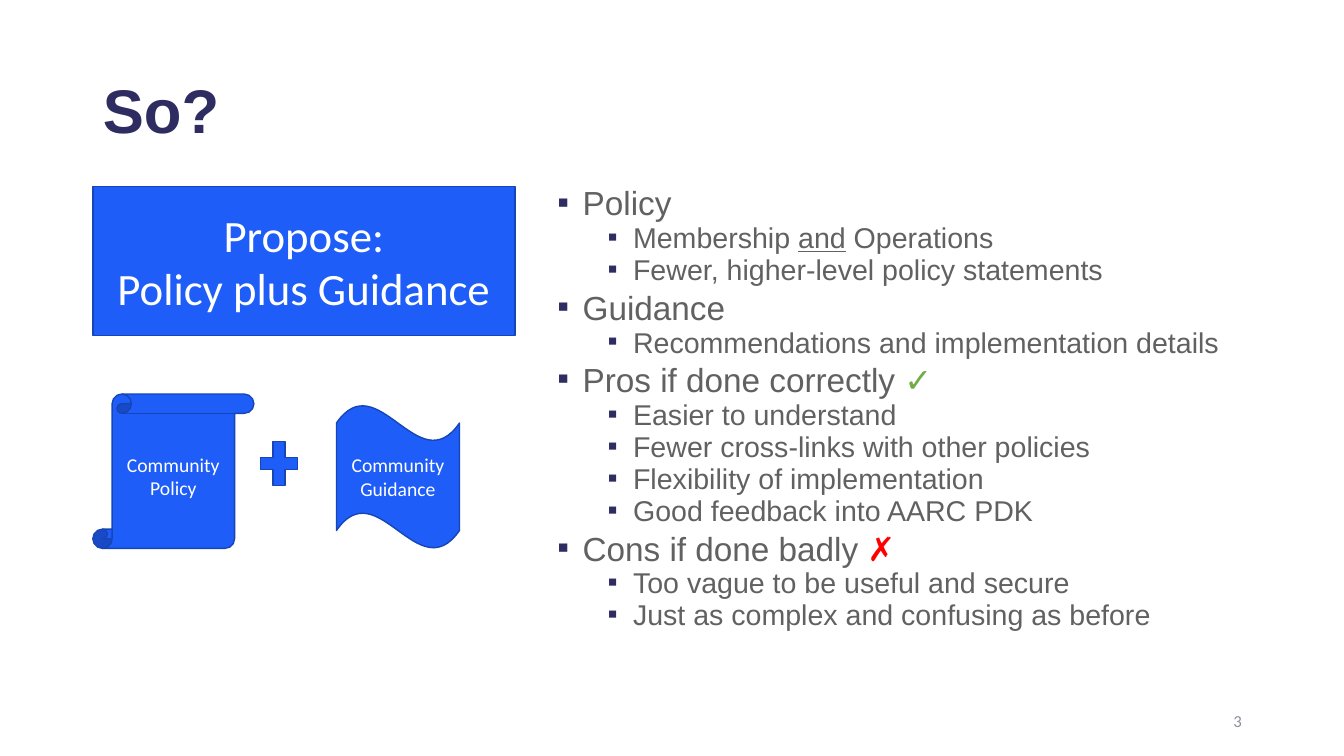
from lxml import etree
from pptx import Presentation
from pptx.dml.color import RGBColor
from pptx.enum.shapes import MSO_SHAPE
from pptx.enum.text import MSO_ANCHOR, MSO_AUTO_SIZE, PP_ALIGN
from pptx.oxml.ns import qn
from pptx.util import Cm, Pt

RECTANGLE, SCROLL = MSO_SHAPE.RECTANGLE, MSO_SHAPE.VERTICAL_SCROLL
WAVE, PLUS = MSO_SHAPE.WAVE, MSO_SHAPE.MATH_PLUS
TOP, MIDDLE = MSO_ANCHOR.TOP, MSO_ANCHOR.MIDDLE
LEFT, CENTER, RIGHT = PP_ALIGN.LEFT, PP_ALIGN.CENTER, PP_ALIGN.RIGHT
NO_FIT = MSO_AUTO_SIZE.NONE

NAVY, GREY, PALE_GREY = "2E2C61", "616161", "8F8F9E"
BLUE, DARK_BLUE, WHITE = "1E5DF8", "1645B7", "FFFFFF"
GREEN, RED = "70AD47", "FF0000"

LEVELS = [
    {"size": 23.8, "before": 8, "margin": Cm(0.64)},
    {"size": 20.4, "before": 5, "margin": Cm(1.91)},
]
HANGING = Cm(0.64)

POINTS = [
    (0, [("Policy", {})]),
    (1, [("Membership ", {}), ("and", {"underline": True}), (" Operations", {})]),
    (1, [("Fewer, higher-level policy statements", {})]),
    (0, [("Guidance", {})]),
    (1, [("Recommendations and implementation details", {})]),
    (0, [("Pros if done correctly ", {}), ("✓", {"color": GREEN})]),
    (1, [("Easier to understand", {})]),
    (1, [("Fewer cross-links with other policies", {})]),
    (1, [("Flexibility of implementation", {})]),
    (1, [("Good feedback into AARC PDK", {})]),
    (0, [("Cons if done badly ", {}), ("✗", {"color": RED})]),
    (1, [("Too vague to be useful and secure", {})]),
    (1, [("Just as complex and confusing as before", {})]),
]


def rgb(color):
    return RGBColor.from_string(color)


def add_span(para, text, size, color, font="Calibri", bold=None, underline=None):
    span = para.add_run()
    span.text = text
    span.font.name = font
    span.font.size = Pt(size)
    span.font.color.rgb = rgb(color)
    span.font.bold = bold
    span.font.underline = underline


def place(box, left, top, width, height):
    box.left, box.top = Cm(left), Cm(top)
    box.width, box.height = Cm(width), Cm(height)


def set_frame(box, anchor):
    frame = box.text_frame
    frame.word_wrap = True
    frame.auto_size = NO_FIT
    frame.vertical_anchor = anchor
    return frame


def add_bullet(para, level):
    properties = para._p.get_or_add_pPr()
    properties.set("marL", str(LEVELS[level]["margin"]))
    properties.set("indent", str(-HANGING))
    color = etree.SubElement(properties, qn("a:buClr"))
    etree.SubElement(color, qn("a:srgbClr"), val=NAVY)
    etree.SubElement(properties, qn("a:buFont"), typeface="Arial")
    etree.SubElement(properties, qn("a:buChar"), char="▪")


def fill_title(title, text):
    place(title, 2.34, 1.02, 29.21, 3.68)
    para = set_frame(title, MIDDLE).paragraphs[0]
    para.alignment = LEFT
    para.line_spacing = 0.9
    add_span(para, text, 44, NAVY, "Arial", bold=True)


def fill_body(body, points):
    place(body, 13.79, 4.72, 17.78, 12.12)
    frame = set_frame(body, TOP)
    for index, (level, spans) in enumerate(points):
        para = frame.add_paragraph() if index else frame.paragraphs[0]
        para.level = level
        add_bullet(para, level)
        para.line_spacing = 0.73
        para.space_before = Pt(LEVELS[level]["before"] if index else 0)
        for text, style in spans:
            look = {"color": GREY, "font": "Arial", **style}
            add_span(para, text, LEVELS[level]["size"], **look)


def add_blue_shape(page, kind, left, top, width, height, lines=(), size=14):
    shape = page.shapes.add_shape(kind, Cm(left), Cm(top), Cm(width), Cm(height))
    shape.shadow.inherit = False
    shape.fill.solid()
    shape.fill.fore_color.rgb = rgb(BLUE)
    shape.line.color.rgb = rgb(DARK_BLUE)
    shape.line.width = Pt(1)
    frame = set_frame(shape, MIDDLE)
    for index, line in enumerate(lines):
        para = frame.add_paragraph() if index else frame.paragraphs[0]
        para.alignment = CENTER
        add_span(para, line, size, WHITE)


def add_page_number(page, number):
    box = page.shapes.add_textbox(Cm(23.93), Cm(17.65), Cm(7.62), Cm(1.02))
    para = set_frame(box, MIDDLE).paragraphs[0]
    para.alignment = RIGHT
    add_span(para, number, 12, PALE_GREY)


def main():
    deck = Presentation()
    deck.slide_width, deck.slide_height = Cm(33.87), Cm(19.05)
    page = deck.slides.add_slide(deck.slide_layouts[1])
    fill_title(page.shapes.title, "So?")
    fill_body(page.placeholders[1], POINTS)
    add_page_number(page, "3")
    add_blue_shape(page, RECTANGLE, 2.34, 4.7, 10.64, 3.76,
                   ["Propose:", "Policy plus Guidance"], 32)
    add_blue_shape(page, SCROLL, 2.34, 9.93, 4.06, 3.89, ["Community", "Policy"])
    add_blue_shape(page, WAVE, 8.48, 10.21, 3.1, 3.61, ["Community", "Guidance"])
    add_blue_shape(page, PLUS, 6.4, 10.92, 1.27, 1.52)
    deck.save("out.pptx")


if __name__ == "__main__":
    main()
